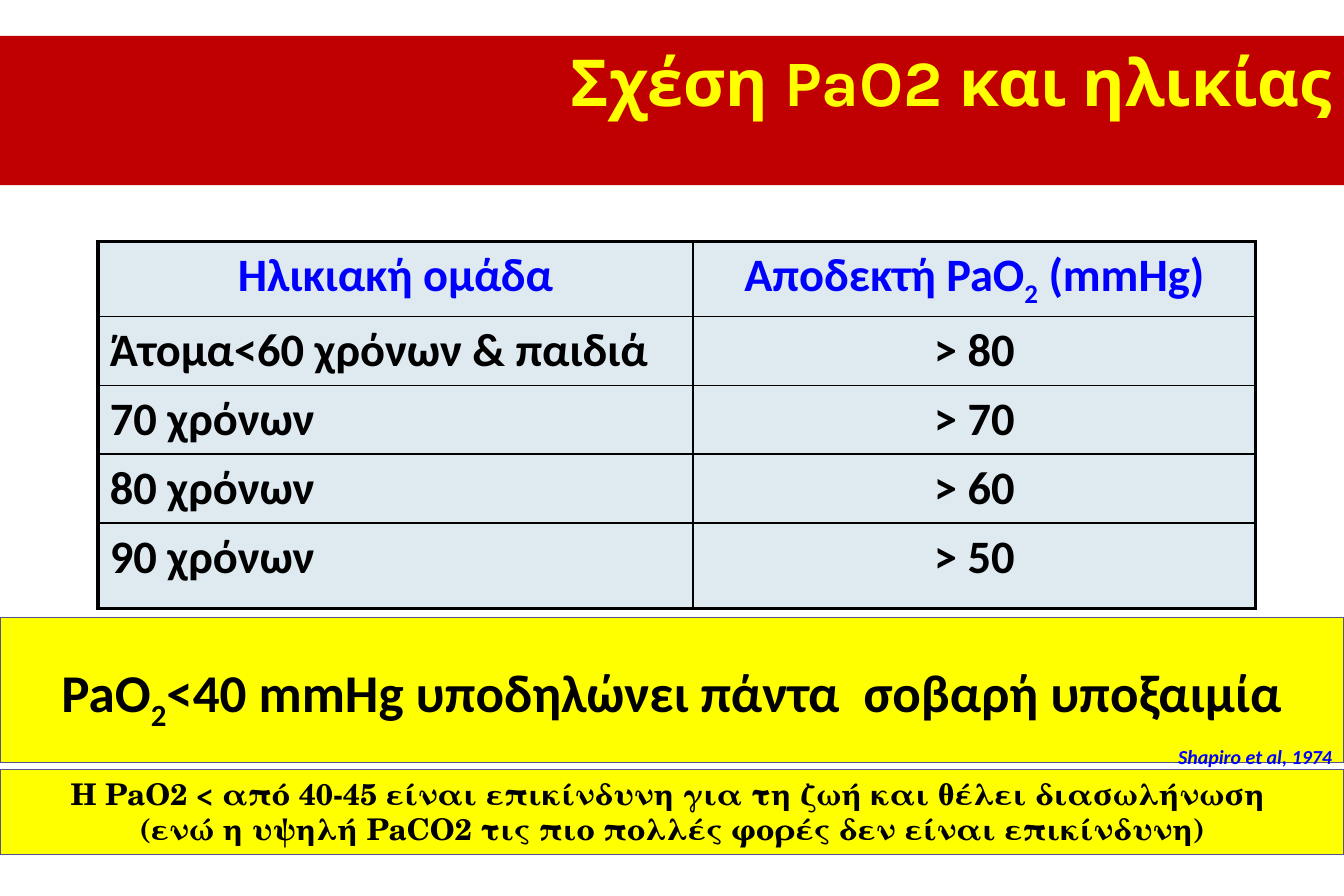
from lxml import etree
from pptx import Presentation
from pptx import util as u
from pptx.dml.color import RGBColor
from pptx.enum import shapes, text
from pptx.oxml import ns

COLORS = {"red": "C00000", "yellow": "FFFF00", "blue": "0000FF",
          "black": "000000", "pale": "DEE9F0", "outline": "53548A"}
ALIGN = text.PP_ALIGN
WIDTH, HEIGHT = 11.25, 7.5
COLUMNS = [4.98, 4.71]
ROWS = [0.63, 0.57, 0.57, 0.57, 0.72]
AGE_GROUPS = [
    ("Ηλικιακή ομάδα", "Αποδεκτή PaO|2| (mmHg)"),
    ("Άτομα<60 χρόνων & παιδιά", "> 80"),
    ("70 χρόνων", "> 70"),
    ("80 χρόνων", "> 60"),
    ("90 χρόνων", "> 50"),
]


def color(name):
    return RGBColor.from_string(COLORS[name])


def fill(part, name):
    part.fill.solid()
    part.fill.fore_color.rgb = color(name)


def write(frame, words, size=28, font="Calibri", ink="black", italic=False,
          align=ALIGN.CENTER, spacing=1.0):
    """Add a paragraph; words between bars are set as subscripts."""
    used = frame.paragraphs[0].runs
    line = frame.add_paragraph() if used else frame.paragraphs[0]
    line.alignment, line.line_spacing = align, spacing
    for i, piece in enumerate(words.split("|")):
        run = line.add_run()
        run.text = piece
        run.font.size, run.font.name = u.Pt(size), font
        run.font.bold, run.font.italic = True, italic
        run.font.color.rgb = color(ink)
        if i % 2:
            run._r.get_or_add_rPr().set("baseline", "-25000")


def border(cell, side, points):
    edge = etree.SubElement(cell._tc.get_or_add_tcPr(), ns.qn(f"a:ln{side}"),
                            w=str(u.Pt(points)))
    paint = etree.SubElement(edge, ns.qn("a:solidFill"))
    etree.SubElement(paint, ns.qn("a:srgbClr"), val=COLORS["black"])


def title_banner(slide, box):
    banner = slide.shapes.title
    banner.left, banner.top, banner.width, banner.height = map(u.Inches, box)
    fill(banner, "red")
    frame = banner.text_frame
    frame.auto_size = text.MSO_AUTO_SIZE.NONE
    frame.vertical_anchor = text.MSO_ANCHOR.TOP
    write(frame, "Σχέση PaO2 και ηλικίας", size=39, font="Karla",
          ink="yellow", align=ALIGN.RIGHT)


def age_table(slide, box):
    table = slide.shapes.add_table(len(ROWS), len(COLUMNS), *map(u.Inches, box)).table
    table.first_row = table.horz_banding = False
    for column, width in zip(table.columns, COLUMNS):
        column.width = u.Inches(width)
    for r, (height, values) in enumerate(zip(ROWS, AGE_GROUPS)):
        table.rows[r].height = u.Inches(height)
        for c, value in enumerate(values):
            cell = table.cell(r, c)
            # Heavy outer frame, thin inner rules
            outer = {"L": c == 0, "R": c == len(COLUMNS) - 1,
                     "T": r == 0, "B": r == len(ROWS) - 1}
            for side, heavy in outer.items():
                border(cell, side, 2.25 if heavy else 1)
            fill(cell, "pale")
            write(cell.text_frame, value, ink="black" if r else "blue",
                  align=ALIGN.LEFT if r and not c else ALIGN.CENTER)


def warning_band(slide, box):
    band = slide.shapes.add_shape(shapes.MSO_SHAPE.RECTANGLE, *map(u.Inches, box))
    band.shadow.inherit = False
    fill(band, "yellow")
    band.line.color.rgb = color("outline")
    band.line.width = u.Pt(0.75)
    frame = band.text_frame
    frame.word_wrap = True
    frame.vertical_anchor = text.MSO_ANCHOR.TOP
    return frame


def main():
    deck = Presentation()
    deck.slide_width, deck.slide_height = u.Inches(WIDTH), u.Inches(HEIGHT)
    slide = deck.slides.add_slide(deck.slide_layouts[5])

    title_banner(slide, (0, 0.3, WIDTH, 1.25))
    age_table(slide, (0.82, 2.02, sum(COLUMNS), sum(ROWS)))

    # Severe hypoxaemia threshold and its citation
    hypoxaemia = warning_band(slide, (0, 5.17, WIDTH, 1.21))
    write(hypoxaemia, "PaO|2|<40 mmHg υποδηλώνει πάντα  σοβαρή υποξαιμία",
          size=32, spacing=1.5)
    write(hypoxaemia, "Shapiro et al, 1974", size=12, ink="blue", italic=True,
          align=ALIGN.RIGHT, spacing=1.5)

    # Intubation advice
    intubation = warning_band(slide, (0, 6.44, WIDTH, 0.71))
    for advice in ("Η PaO2 < από 40-45 είναι επικίνδυνη για τη ζωή και θέλει διασωλήνωση ",
                   "(ενώ η υψηλή PaCO2 τις πιο πολλές φορές δεν είναι επικίνδυνη)"):
        write(intubation, advice, size=18, font="TeX Gyre Schola")

    deck.save("out.pptx")


if __name__ == "__main__":
    main()
